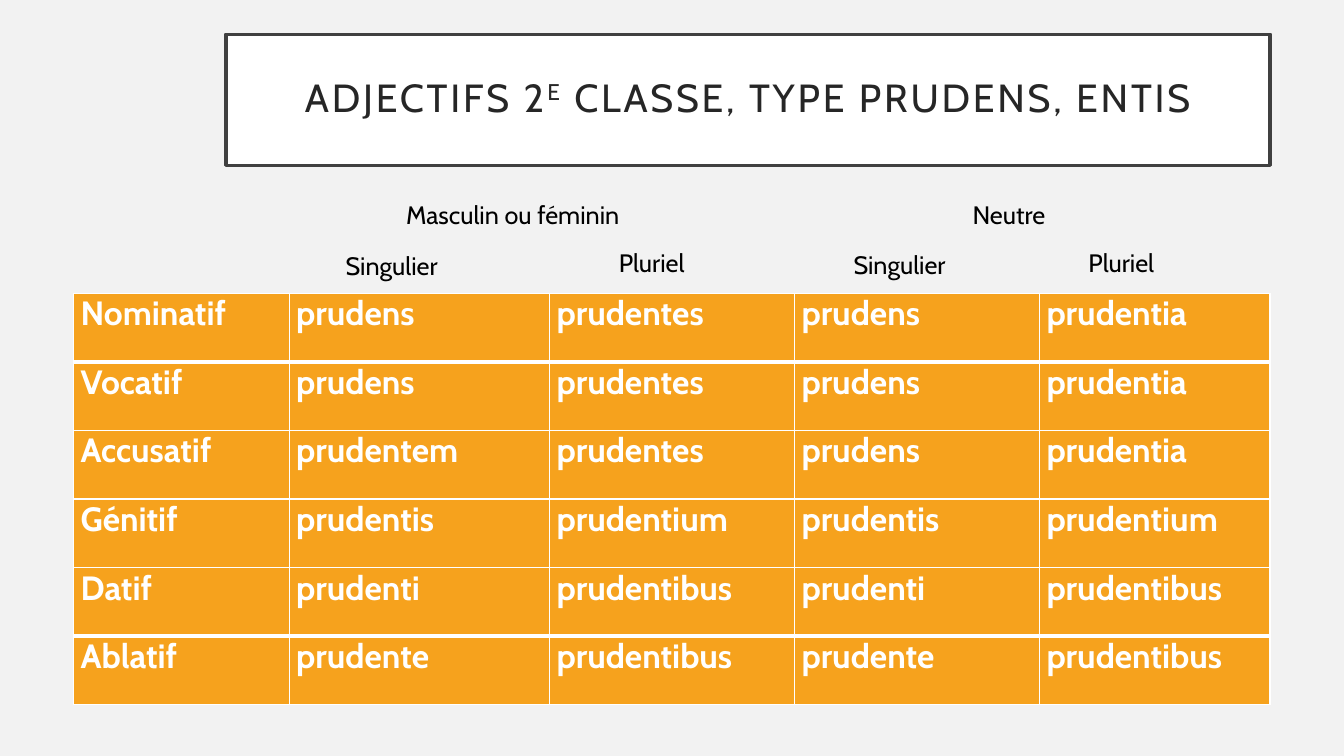
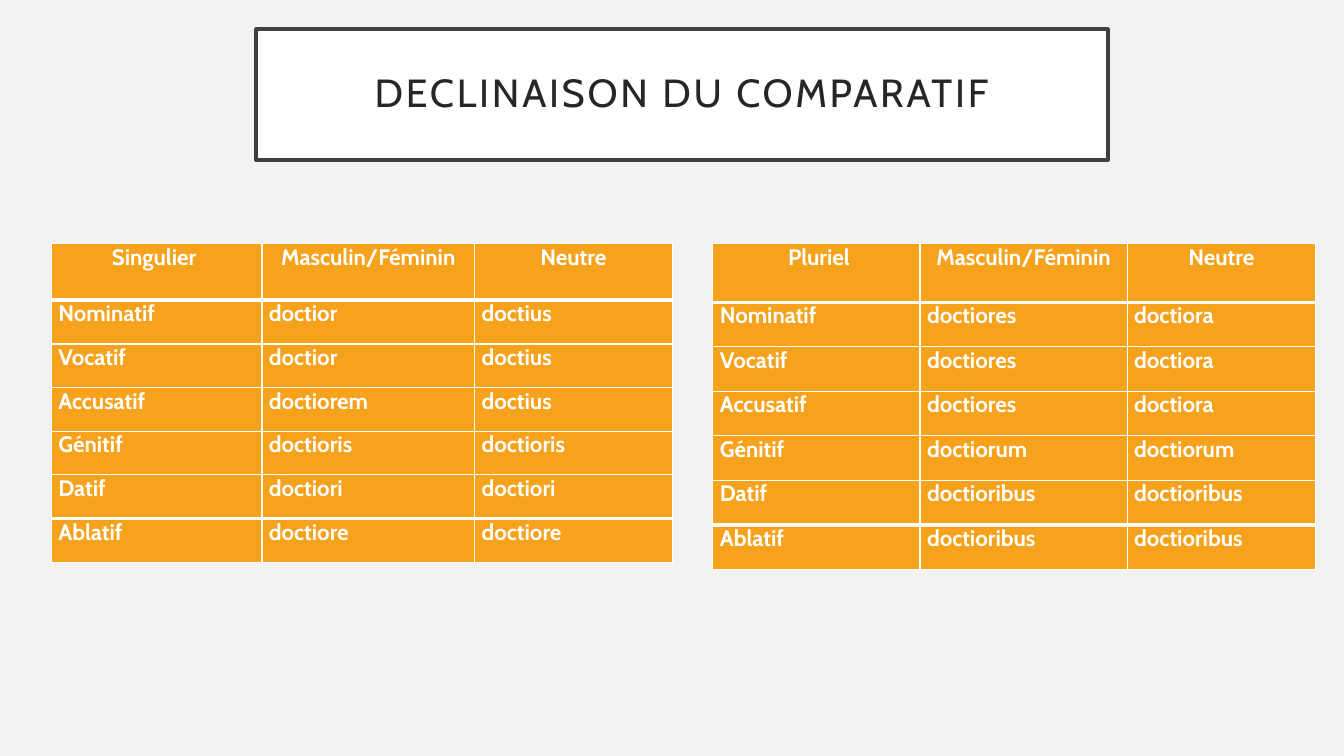
from dataclasses import dataclass

from lxml import etree
from pptx import Presentation
from pptx.dml.color import RGBColor
from pptx.enum.shapes import MSO_SHAPE
from pptx.enum.text import MSO_ANCHOR, PP_ALIGN
from pptx.oxml.ns import qn
from pptx.util import Pt

RECTANGLE = MSO_SHAPE.RECTANGLE
MIDDLE = MSO_ANCHOR.MIDDLE
CENTER, LEFT = PP_ALIGN.CENTER, PP_ALIGN.LEFT

COLORS = {
    "background": "F2F2F2",
    "panel": "FFFFFF",
    "frame": "404040",
    "title": "262626",
    "label": "000000",
    "cell": "F6A21D",
    "cell_text": "FFFFFF",
    "border": "FFFFFF",
}
FONT = "Cabin"
CASES = ("Nominatif", "Vocatif", "Accusatif", "Génitif", "Datif", "Ablatif")
THIN, THICK = 1, 3


@dataclass(frozen=True)
class Title:
    spans: tuple[str, ...]
    left: float
    top: float
    width: float
    height: float = 93.6
    superscript: int | None = None


@dataclass(frozen=True)
class Label:
    text: str
    left: float
    top: float
    width: float = 108.7


@dataclass(frozen=True)
class Declension:
    """A table with one row per case; each column of forms follows CASES."""
    left: float
    top: float
    widths: tuple[float, ...]
    row_height: float
    size: float
    columns: tuple[tuple[str, ...], ...]
    header: tuple[str, ...] = ()
    header_height: float = 0


ADJECTIVE_TITLE = Title(
    ("ADJECTIFS 2", "E", " CLASSE, TYPE PRUDENS, ENTIS"), 161.3, 24.5, 746, superscript=1
)
COMPARATIVE_TITLE = Title(("DECLINAISON DU COMPARATIF",), 182.9, 20.9, 608.4)

ADJECTIVE_LABELS = (
    Label("Masculin ou féminin", 283, 139, 206.6),
    Label("Neutre", 687.6, 139),
    Label("Singulier", 602.6, 174.2),
    Label("Singulier", 239.8, 175),
    Label("Pluriel", 434.9, 172.8),
    Label("Pluriel", 770.4, 172.8),
)

PRUDENS = Declension(
    52.6, 209.5, (154, 186, 175, 175, 164.6), 49, 24,
    (
        ("prudens", "prudens", "prudentem", "prudentis", "prudenti", "prudente"),
        ("prudentes", "prudentes", "prudentes", "prudentium", "prudentibus", "prudentibus"),
        ("prudens", "prudens", "prudens", "prudentis", "prudenti", "prudente"),
        ("prudentia", "prudentia", "prudentia", "prudentium", "prudentibus", "prudentibus"),
    ),
)
COMPARATIVES = (
    Declension(
        36.7, 174.2, (150.4, 152, 141), 31.2, 16,
        (
            ("doctior", "doctior", "doctiorem", "doctioris", "doctiori", "doctiore"),
            ("doctius", "doctius", "doctius", "doctioris", "doctiori", "doctiore"),
        ),
        ("Singulier ", "Masculin/Féminin", "Neutre"), 40.3,
    ),
    Declension(
        509.2, 174.2, (148, 148, 134.6), 31.8, 16,
        (
            ("doctiores", "doctiores", "doctiores", "doctiorum", "doctioribus", "doctioribus"),
            ("doctiora", "doctiora", "doctiora", "doctiorum", "doctioribus", "doctioribus"),
        ),
        (" Pluriel", "Masculin/Féminin", "Neutre"), 41.8,
    ),
)


def color(name: str) -> RGBColor:
    return RGBColor.from_string(COLORS[name])


def format_span(span, size: float, color_name: str, bold: bool = False) -> None:
    span.font.name = FONT
    span.font.size = Pt(size)
    span.font.bold = bold
    span.font.color.rgb = color(color_name)


def add_page(deck, title: Title):
    page = deck.slides.add_slide(deck.slide_layouts[6])
    page.background.fill.solid()
    page.background.fill.fore_color.rgb = color("background")
    add_title(page, title)
    return page


def add_title(page, title: Title) -> None:
    box = page.shapes.add_shape(
        RECTANGLE, Pt(title.left), Pt(title.top), Pt(title.width), Pt(title.height)
    )
    box.shadow.inherit = False
    box.fill.solid()
    box.fill.fore_color.rgb = color("panel")
    box.line.color.rgb = color("frame")
    box.line.width = Pt(2.5)
    frame = box.text_frame
    frame.word_wrap = True
    frame.vertical_anchor = MIDDLE
    frame.margin_left = frame.margin_right = Pt(14.4)
    frame.margin_top = frame.margin_bottom = Pt(14.4)
    para = frame.paragraphs[0]
    para.alignment = CENTER
    para.line_spacing = 0.9
    for index, text in enumerate(title.spans):
        span = para.add_run()
        span.text = text
        format_span(span, 28, "title")
        properties = span.font._element
        properties.set("spc", "200")
        if index == title.superscript:
            properties.set("baseline", "30000")


def add_label(page, label: Label) -> None:
    box = page.shapes.add_textbox(Pt(label.left), Pt(label.top), Pt(label.width), Pt(29))
    box.text_frame.word_wrap = True
    box.text_frame.text = label.text
    format_span(box.text_frame.paragraphs[0].runs[0], 18, "label")


def add_borders(cell, top: float, bottom: float) -> None:
    """Draws the four cell borders; call it before the cell gets its fill."""
    properties = cell._tc.get_or_add_tcPr()
    widths = {"a:lnL": THIN, "a:lnR": THIN, "a:lnT": top, "a:lnB": bottom}
    for tag, width in widths.items():
        line = etree.SubElement(properties, qn(tag), w=str(Pt(width)))
        fill = etree.SubElement(line, qn("a:solidFill"))
        etree.SubElement(fill, qn("a:srgbClr"), val=COLORS["border"])


def fill_cell(cell, text: str, size: float, alignment) -> None:
    cell.fill.solid()
    cell.fill.fore_color.rgb = color("cell")
    cell.margin_left = cell.margin_right = Pt(5)
    cell.margin_top = cell.margin_bottom = Pt(0)
    cell.text_frame.text = text
    para = cell.text_frame.paragraphs[0]
    para.alignment = alignment
    format_span(para.runs[0], size, "cell_text", bold=True)


def add_declension(page, declension: Declension) -> None:
    rows = list(zip(CASES, *declension.columns))
    heights = [declension.row_height] * len(rows)
    if declension.header:
        rows.insert(0, declension.header)
        heights.insert(0, declension.header_height)
    table = page.shapes.add_table(
        len(rows), len(declension.widths), Pt(declension.left), Pt(declension.top),
        Pt(sum(declension.widths)), Pt(sum(heights)),
    ).table
    table.first_row = table.horz_banding = False
    for column, width in zip(table.columns, declension.widths):
        column.width = Pt(width)
    last = len(rows) - 1
    for index, (texts, height) in enumerate(zip(rows, heights)):
        table.rows[index].height = Pt(height)
        top = THICK if index in (1, last) else THIN
        bottom = THICK if index in (0, last - 1) else THIN
        alignment = CENTER if declension.header and index == 0 else LEFT
        for cell, text in zip(table.rows[index].cells, texts):
            add_borders(cell, top, bottom)
            fill_cell(cell, text, declension.size, alignment)


def main() -> None:
    deck = Presentation()
    deck.slide_width, deck.slide_height = Pt(960), Pt(540)

    adjective_page = add_page(deck, ADJECTIVE_TITLE)
    add_declension(adjective_page, PRUDENS)
    for label in ADJECTIVE_LABELS:
        add_label(adjective_page, label)

    comparative_page = add_page(deck, COMPARATIVE_TITLE)
    for declension in COMPARATIVES:
        add_declension(comparative_page, declension)

    deck.save("out.pptx")


if __name__ == "__main__":
    main()
